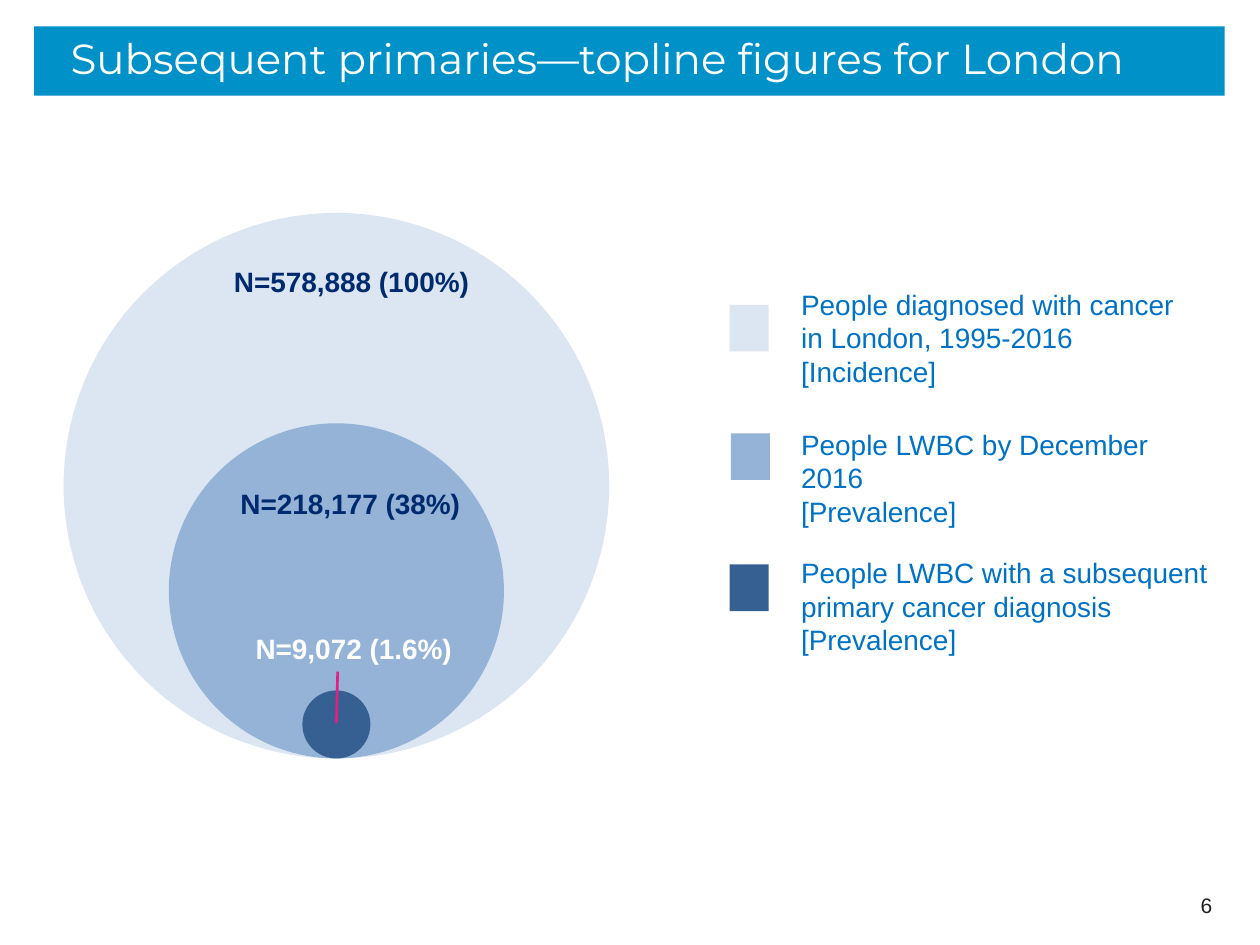
from dataclasses import dataclass

from lxml import etree
from pptx import Presentation
from pptx import util as u
from pptx.dml.color import RGBColor
from pptx.enum import shapes, text
from pptx.oxml.ns import qn


@dataclass(frozen=True)
class Theme:
    banner: str = "0091C9"
    white: str = "FFFFFF"
    navy: str = "002A6E"
    legend: str = "0072C6"
    number: str = "202020"
    pointer: str = "E31F83"
    incidence: str = "DCE6F2"
    prevalence: str = "95B3D7"
    subsequent: str = "376092"
    title_font: str = "Montserrat"
    body_font: str = "Arial"
    title_size: int = 24
    body_size: int = 16
    number_size: int = 12


THEME = Theme()

# Content
TITLE = "Subsequent primaries—topline figures for London"
PAGE_NUMBER = "6"
CIRCLES = [  # diameter, colour
    (4.33, THEME.incidence),
    (2.66, THEME.prevalence),
    (0.54, THEME.subsequent),
]
FIGURES = [  # text, box, colour, alignment
    ("N=578,888 (100%)", (1.69, 2.05, 2.2, 0.37), THEME.navy, text.PP_ALIGN.CENTER),
    ("N=218,177 (38%)", (1.81, 3.81, 2.09, 0.37), THEME.navy, text.PP_ALIGN.LEFT),
    ("N=9,072 (1.6%)", (1.93, 4.96, 1.84, 0.37), THEME.white, text.PP_ALIGN.LEFT),
]
LEGEND = [  # paragraphs, colour, swatch left and top, text top, width, height
    (["People diagnosed with cancer in London, 1995-2016 [Incidence]"],
     THEME.incidence, (5.79, 2.42), (2.23, 3.31, 0.91)),
    (["People LWBC by December 2016", "[Prevalence]"],
     THEME.prevalence, (5.8, 3.44), (3.34, 3.46, 0.91)),
    (["People LWBC with a subsequent primary cancer diagnosis [Prevalence]"],
     THEME.subsequent, (5.79, 4.48), (4.36, 3.46, 1.07)),
]

# Layout
CENTRE_X, CIRCLES_BOTTOM = 2.67, 6.02
SWATCH_SIZE = (0.31, 0.37)
LEGEND_TEXT_LEFT = 6.26
POINTER = ((2.68, 5.33), (2.67, 5.74))


def inches(values):
    return [u.Inches(value) for value in values]


def add_filled(slide, kind, box, color):
    shape = slide.shapes.add_shape(kind, *inches(box))
    shape.shadow.inherit = False
    shape.fill.solid()
    shape.fill.fore_color.rgb = RGBColor.from_string(color)
    shape.line.fill.background()
    return shape


def write(shape, lines, size, color, font=THEME.body_font, bold=False,
          align=text.PP_ALIGN.LEFT, anchor=text.MSO_ANCHOR.TOP):
    frame = shape.text_frame
    frame.word_wrap = True
    frame.vertical_anchor = anchor
    for index, line in enumerate(lines):
        paragraph = frame.add_paragraph() if index else frame.paragraphs[0]
        paragraph.alignment = align
        run = paragraph.add_run()
        run.text = line
        run.font.name = font
        run.font.size = u.Pt(size)
        run.font.bold = bold
        run.font.color.rgb = RGBColor.from_string(color)


def add_text(slide, box, lines, size, color, **style):
    write(slide.shapes.add_textbox(*inches(box)), lines, size, color, **style)


def add_pointer(slide):
    start, end = POINTER
    pointer = slide.shapes.add_connector(
        shapes.MSO_CONNECTOR.STRAIGHT, *inches(start + end))
    pointer.line.color.rgb = RGBColor.from_string(THEME.pointer)
    pointer.line.width = u.Pt(1.5)
    properties = pointer.element.find(qn("p:spPr"))
    etree.SubElement(properties, qn("a:effectLst"))


def main():
    presentation = Presentation()
    presentation.slide_width, presentation.slide_height = inches((10, 7.5))
    slide = presentation.slides.add_slide(presentation.slide_layouts[6])
    rectangle, oval = shapes.MSO_SHAPE.RECTANGLE, shapes.MSO_SHAPE.OVAL

    # Title banner
    banner = add_filled(slide, rectangle, (0.27, 0.21, 9.45, 0.55), THEME.banner)
    banner.text_frame.margin_left = u.Inches(0.29)
    write(banner, [TITLE], THEME.title_size, THEME.white, font=THEME.title_font)

    # Nested circles, resting on one bottom point
    for diameter, color in CIRCLES:
        box = (CENTRE_X - diameter / 2, CIRCLES_BOTTOM - diameter, diameter, diameter)
        add_filled(slide, oval, box, color)

    # Legend
    for lines, color, corner, (top, width, height) in LEGEND:
        add_filled(slide, rectangle, corner + SWATCH_SIZE, color)
        add_text(slide, (LEGEND_TEXT_LEFT, top, width, height), lines,
                 THEME.body_size, THEME.legend)

    # Figures and pointer
    for figure, box, color, align in FIGURES:
        add_text(slide, box, [figure], THEME.body_size, color, bold=True, align=align)
    add_pointer(slide)

    # Page number
    add_text(slide, (7.39, 6.98, 2.33, 0.4), [PAGE_NUMBER], THEME.number_size,
             THEME.number, align=text.PP_ALIGN.RIGHT, anchor=text.MSO_ANCHOR.MIDDLE)

    presentation.save("out.pptx")


if __name__ == "__main__":
    main()
